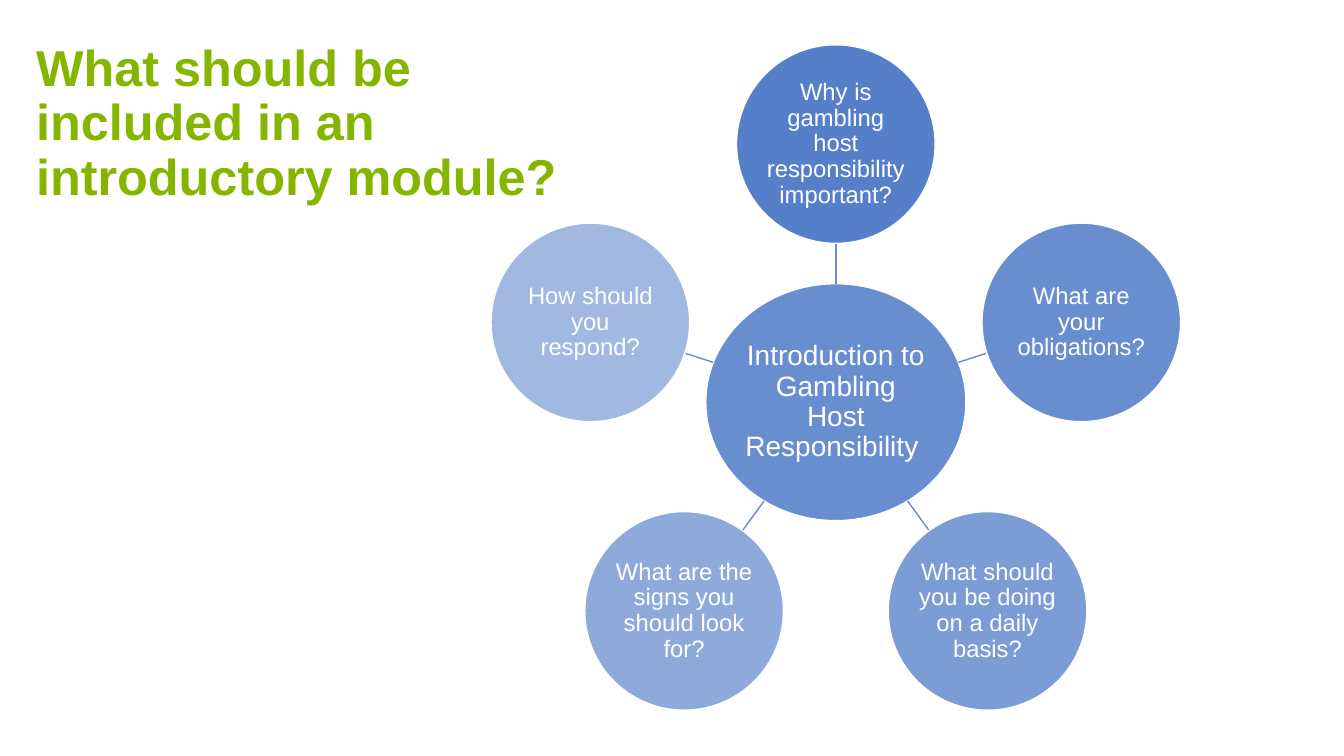
from math import cos, hypot, radians, sin

from lxml import etree
from pptx import Presentation
from pptx.dml.color import RGBColor
from pptx.enum.shapes import MSO_CONNECTOR, MSO_SHAPE
from pptx.enum.text import MSO_ANCHOR, PP_ALIGN
from pptx.oxml.ns import qn
from pptx.util import Inches, Pt

OVAL = MSO_SHAPE.OVAL
LINE = MSO_CONNECTOR.STRAIGHT
MIDDLE = MSO_ANCHOR.MIDDLE
LEFT, CENTER = PP_ALIGN.LEFT, PP_ALIGN.CENTER
COLORS = {"title": "84B600", "oval": "4472C4", "spoke": "6D89CB", "white": "FFFFFF"}
FONT = "Arial"


class Deck:
    """Draws styled elements on the current slide."""

    def __init__(self, prs):
        self.slide = prs.slides.add_slide(prs.slide_layouts[6])
        self.shapes = self.slide.shapes

    def color(self, name):
        return RGBColor.from_string(COLORS[name])

    def label(self, shape, text, size, color, align, bold=False):
        frame = shape.text_frame
        frame.word_wrap = True
        frame.vertical_anchor = MIDDLE
        para = frame.paragraphs[0]
        para.alignment = align
        para.line_spacing = 0.9
        run = para.add_run()
        run.text = text
        run.font.name = FONT
        run.font.size = Pt(size)
        run.font.bold = bold
        run.font.color.rgb = self.color(color)
        return frame

    def title(self, text, x, y, w, h):
        box = self.shapes.add_textbox(Inches(x), Inches(y), Inches(w), Inches(h))
        self.label(box, text, 36, "title", LEFT, True)

    def oval(self, text, x, y, w, h, size, alpha):
        shape = self.shapes.add_shape(
            OVAL, Inches(x - w / 2), Inches(y - h / 2), Inches(w), Inches(h))
        shape.shadow.inherit = False
        shape.fill.solid()
        shape.fill.fore_color.rgb = self.color("oval")
        tint = shape._element.spPr.find(qn("a:solidFill"))[0]
        etree.SubElement(tint, qn("a:alpha")).set("val", str(alpha * 1000))
        shape.line.color.rgb = self.color("white")
        shape.line.width = Pt(1)
        frame = self.label(shape, text, size, "white", CENTER)
        frame.margin_left = frame.margin_right = Inches(0.01)
        frame.margin_top = frame.margin_bottom = Inches(0.01)

    def spoke(self, x1, y1, x2, y2):
        line = self.shapes.add_connector(
            LINE, Inches(x1), Inches(y1), Inches(x2), Inches(y2))
        line.line.color.rgb = self.color("spoke")
        line.line.width = Pt(1)
        etree.SubElement(line._element.spPr, qn("a:effectLst"))


def main():
    prs = Presentation()
    prs.slide_width, prs.slide_height = Inches(13.33), Inches(7.5)
    deck = Deck(prs)
    deck.title("What should be included in an introductory module?",
               0.26, 0.15, 5.52, 2.17)

    hub_x, hub_y, hub_w, hub_h = 8.29, 3.99, 2.58, 2.35
    node, orbit = 1.97, 2.56
    deck.oval("Introduction to Gambling Host Responsibility ",
              hub_x, hub_y, hub_w, hub_h, 20, 80)

    topics = [
        "Why is gambling host responsibility important?",
        "What are your obligations?",
        "What should you be doing on a daily basis?",
        "What are the signs you should look for?",
        "How should you respond?",
    ]
    for i, topic in enumerate(topics):
        angle = radians(360 / len(topics) * i - 90)
        dx, dy = cos(angle), sin(angle)
        start = 1 / hypot(dx / (hub_w / 2), dy / (hub_h / 2))
        end = orbit - node / 2
        deck.spoke(hub_x + start * dx, hub_y + start * dy,
                   hub_x + end * dx, hub_y + end * dy)
        deck.oval(topic, hub_x + orbit * dx, hub_y + orbit * dy,
                  node, node, 17, 90 - 10 * i)

    prs.save("out.pptx")


if __name__ == "__main__":
    main()
